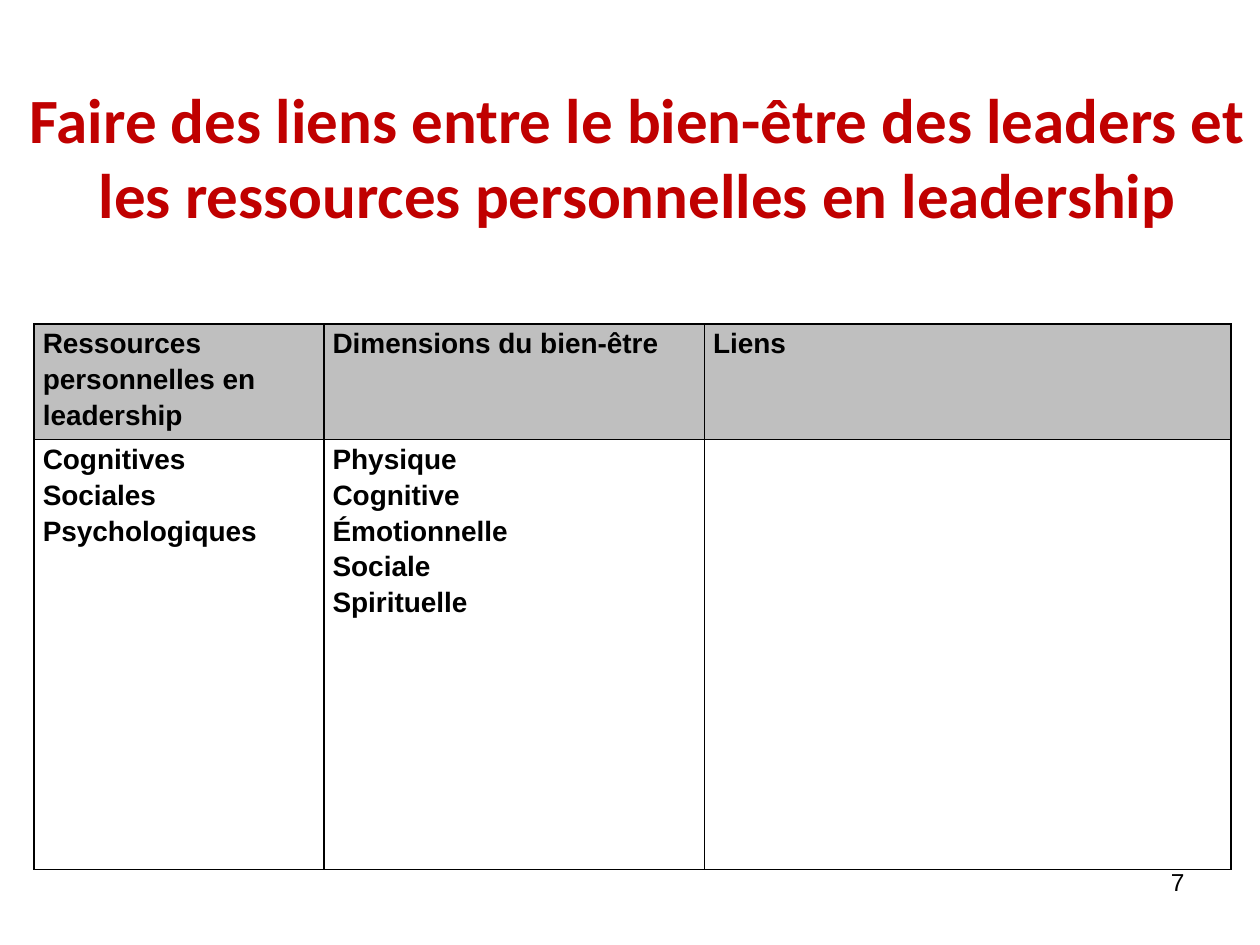
import pptx
import pptx.util
import pptx.dml.color
import pptx.enum.text
import pptx.oxml.ns
import lxml.etree

Inches = pptx.util.Inches
Pt = pptx.util.Pt
RGBColor = pptx.dml.color.RGBColor
ALIGN = pptx.enum.text.PP_ALIGN
ANCHOR = pptx.enum.text.MSO_ANCHOR

RED = RGBColor(0xC0, 0x00, 0x00)
BLACK = RGBColor(0x00, 0x00, 0x00)
GREY = RGBColor(0xBF, 0xBF, 0xBF)

WIDTHS = [2.3, 3.02, 4.18]
HEIGHTS = [0.92, 3.41]
ROWS = [
    [["Ressources personnelles en leadership"],
     ["Dimensions du bien-être"],
     ["Liens"]],
    [["Cognitives", "Sociales", "Psychologiques"],
     ["Physique", "Cognitive", "Émotionnelle", "Sociale", "Spirituelle"],
     []],
]


def add_run(para, text, font, size, color, bold=False):
    run = para.add_run()
    run.text = text
    run.font.name = font
    run.font.size = Pt(size)
    run.font.bold = bold
    run.font.color.rgb = color


def set_title(slide, text):
    title = slide.shapes.title
    title.left, title.top = Inches(0.12), Inches(0.3)
    title.width, title.height = Inches(9.88), Inches(1.87)
    frame = title.text_frame
    frame.word_wrap = True
    frame.auto_size = pptx.enum.text.MSO_AUTO_SIZE.NONE
    frame.vertical_anchor = ANCHOR.MIDDLE
    para = frame.paragraphs[0]
    para.alignment = ALIGN.CENTER
    add_run(para, text, "Calibri", 36, RED, True)


def add_edges(cell):
    """Draw a thin black line on all four sides of a cell."""
    props = cell._tc.get_or_add_tcPr()
    qn = pptx.oxml.ns.qn
    for side in ("a:lnL", "a:lnR", "a:lnT", "a:lnB"):
        line = lxml.etree.SubElement(props, qn(side), w=str(Pt(1)))
        fill = lxml.etree.SubElement(line, qn("a:solidFill"))
        lxml.etree.SubElement(fill, qn("a:srgbClr"), val=str(BLACK))


def fill_cell(cell, lines, head):
    cell.margin_left = cell.margin_right = Inches(0.07)
    cell.margin_top = cell.margin_bottom = 0
    add_edges(cell)
    if head:
        cell.fill.solid()
        cell.fill.fore_color.rgb = GREY
    else:
        cell.fill.background()
    frame = cell.text_frame
    for i, text in enumerate(lines):
        para = frame.add_paragraph() if i else frame.paragraphs[0]
        para.line_spacing = 1.15
        add_run(para, text, "Arial", 16, BLACK, True)


def add_grid(slide):
    frame = slide.shapes.add_table(
        len(HEIGHTS), len(WIDTHS), Inches(0.27), Inches(2.57),
        Inches(sum(WIDTHS)), Inches(sum(HEIGHTS)))
    table = frame.table
    for col, width in zip(table.columns, WIDTHS):
        col.width = Inches(width)
    for r, (row, height) in enumerate(zip(table.rows, HEIGHTS)):
        row.height = Inches(height)
        for cell, lines in zip(row.cells, ROWS[r]):
            fill_cell(cell, lines, r == 0)


def add_number(slide, text):
    box = slide.shapes.add_textbox(
        Inches(7.17), Inches(6.83), Inches(2.33), Inches(0.52))
    box.text_frame.word_wrap = True
    para = box.text_frame.paragraphs[0]
    para.alignment = ALIGN.RIGHT
    add_run(para, text, "Arial", 14, BLACK)


def main():
    deck = pptx.Presentation()
    deck.slide_width, deck.slide_height = Inches(10), Inches(7.5)
    slide = deck.slides.add_slide(deck.slide_layouts[5])
    add_grid(slide)
    add_number(slide, "7")
    set_title(slide, "Faire des liens entre le bien-être des leaders et "
                     "les ressources personnelles en leadership")
    deck.save("out.pptx")


if __name__ == "__main__":
    main()
